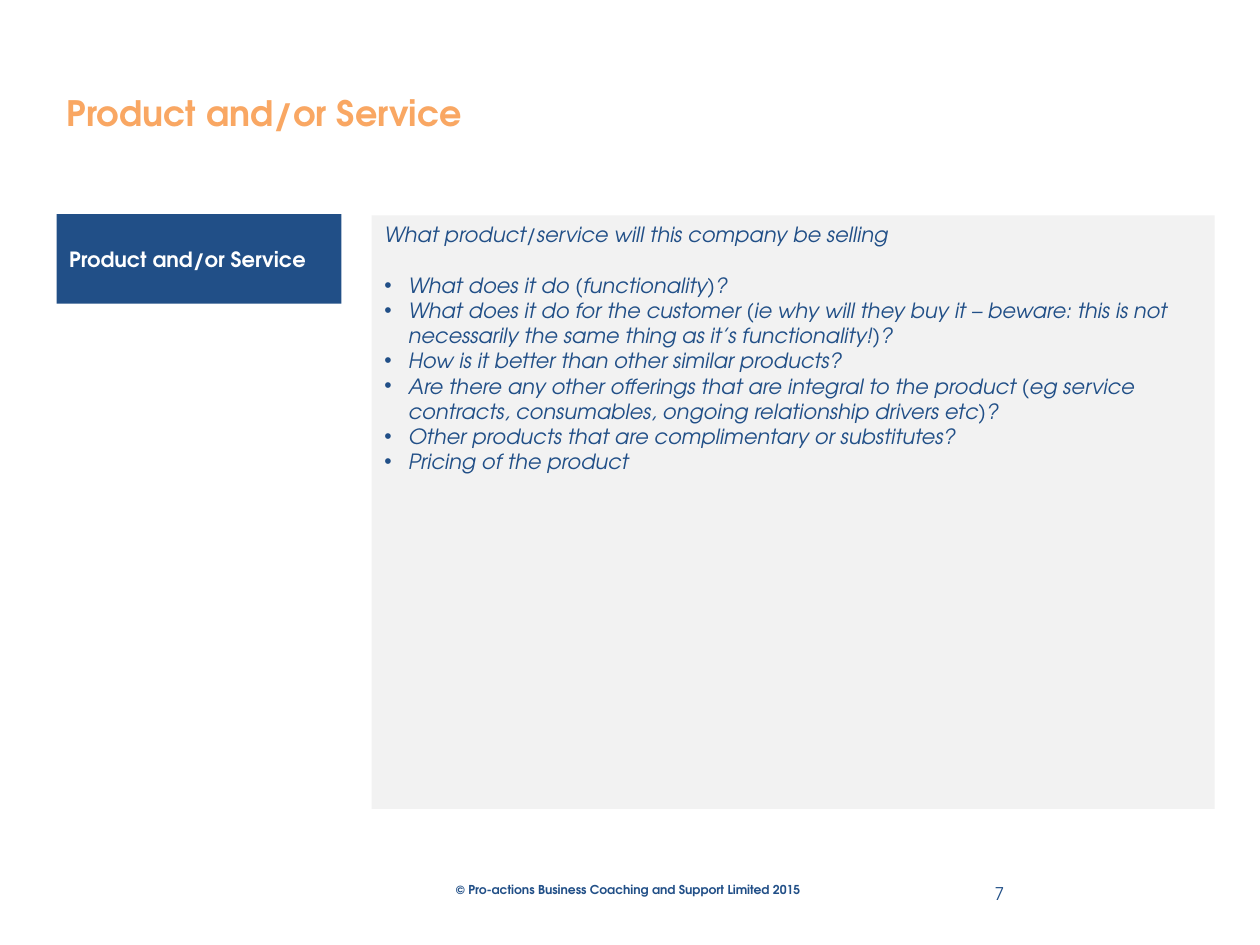
from lxml import etree
from pptx import Presentation
from pptx.dml.color import RGBColor
from pptx.enum.shapes import MSO_SHAPE
from pptx.enum.text import MSO_ANCHOR, MSO_AUTO_SIZE, PP_ALIGN
from pptx.oxml.ns import qn
from pptx.util import Inches, Pt

RECT = MSO_SHAPE.RECTANGLE
TOP, MIDDLE = MSO_ANCHOR.TOP, MSO_ANCHOR.MIDDLE
LEFT, RIGHT = PP_ALIGN.LEFT, PP_ALIGN.RIGHT
NO_FIT = MSO_AUTO_SIZE.NONE

NAVY, ORANGE, GREY, WHITE = "214F87", "F9A763", "F2F2F2", "FFFFFF"
HEADING = "Product and/or Service"
INTRO = "What product/service will this company be selling"
QUESTIONS = [
    "What does it do (functionality)?",
    "What does it do for the customer (ie why will they buy it – beware: "
    "this is not necessarily the same thing as it’s functionality!)?",
    "How is it better than other similar products?",
    "Are there any other offerings that are integral to the product "
    "(eg service contracts, consumables, ongoing relationship drivers etc)?",
    "Other products that are complimentary or substitutes?",
    "Pricing of the product",
]


def rgb(value):
    """Turn a hex string into a colour."""
    return RGBColor.from_string(value)


class Deck:
    """Hold the style and the current slide, placed on a 100 by 75 grid."""

    FONT = "TeX Gyre Adventor"
    COLS, ROWS = 100, 75
    INDENT = Inches(0.19)

    def __init__(self, width, height):
        """Start a presentation with one title and content slide."""
        self.prs = Presentation()
        self.prs.slide_width, self.prs.slide_height = Inches(width), Inches(height)
        self.s = self.prs.slides.add_slide(self.prs.slide_layouts[1])

    def box(self, col, row, cols, rows):
        """Convert grid units to left, top, width and height."""
        x, y = self.prs.slide_width / self.COLS, self.prs.slide_height / self.ROWS
        return round(col * x), round(row * y), round(cols * x), round(rows * y)

    def place(self, sp, cells):
        """Move a placeholder to its grid cells."""
        sp.left, sp.top, sp.width, sp.height = self.box(*cells)

    def set_text(self, sp, text, size, color, bold=False, italic=False,
                 anchor=TOP, align=LEFT):
        """Set the text of a shape and format it."""
        tf = sp.text_frame
        tf.text = text
        tf.word_wrap, tf.auto_size, tf.vertical_anchor = True, NO_FIT, anchor
        for p in tf.paragraphs:
            p.alignment, p.space_before = align, Pt(0)
            for r in p.runs:
                r.font.name, r.font.size = self.FONT, Pt(size)
                r.font.bold, r.font.italic = bold, italic
                r.font.color.rgb = rgb(color)

    def title(self, text, cells):
        """Fill the title placeholder."""
        sp = self.s.shapes.title
        self.place(sp, cells)
        self.set_text(sp, text, 20, ORANGE, bold=True)

    def label(self, text, cells):
        """Add a filled rectangle with a bold label."""
        sp = self.s.shapes.add_shape(RECT, *self.box(*cells))
        sp.shadow.inherit = False
        sp.fill.solid()
        sp.fill.fore_color.rgb = rgb(NAVY)
        sp.line.fill.background()
        self.set_text(sp, text, 12, WHITE, bold=True, anchor=MIDDLE)

    def bullet(self, p, char=None):
        """Give a paragraph a hanging bullet, or none."""
        pPr = p._p.get_or_add_pPr()
        indent = self.INDENT if char else 0
        pPr.set("marL", str(indent))
        pPr.set("indent", str(-indent))
        if char:
            etree.SubElement(pPr, qn("a:buFont"), typeface="Arial")
            etree.SubElement(pPr, qn("a:buChar"), char=char)
        else:
            etree.SubElement(pPr, qn("a:buNone"))

    def panel(self, intro, items, cells):
        """Fill the body placeholder with an intro and a bulleted list."""
        sp = self.s.placeholders[1]
        self.place(sp, cells)
        sp.fill.solid()
        sp.fill.fore_color.rgb = rgb(GREY)
        self.set_text(sp, "\n".join([intro, *items]), 12, NAVY, italic=True)
        first, *rest = sp.text_frame.paragraphs
        self.bullet(first)
        for p in rest:
            self.bullet(p, "•")
        rest[0].space_before = Pt(14.5)

    def text(self, text, cells, size, **style):
        """Add a text box."""
        sp = self.s.shapes.add_textbox(*self.box(*cells))
        self.set_text(sp, text, size, NAVY, **style)


def main():
    """Build and save the slide."""
    deck = Deck(10, 7.5)
    deck.title(HEADING, (4.3, 6.8, 61.4, 4.4))
    deck.label(HEADING, (4.5, 17, 22.6, 7.1))
    deck.panel(INTRO, QUESTIONS, (29.5, 17.1, 66.9, 47.1))
    deck.text("© Pro-actions Business Coaching and Support Limited 2015",
              (35.2, 69.5, 29.9, 2.2), 7, bold=True)
    deck.text("7", (75.4, 68.9, 5.3, 4), 10, anchor=MIDDLE, align=RIGHT)
    deck.prs.save("out.pptx")


if __name__ == "__main__":
    main()
